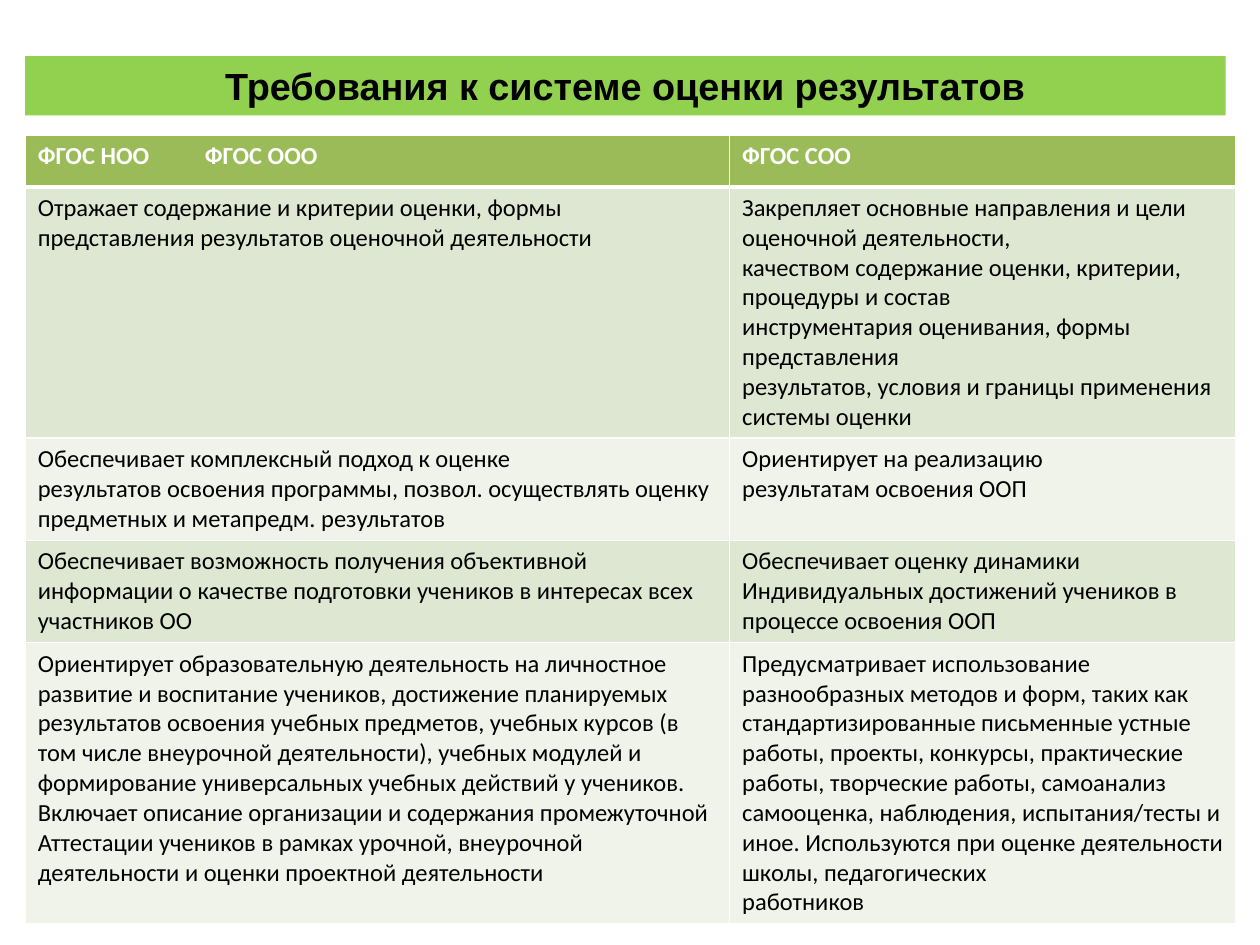
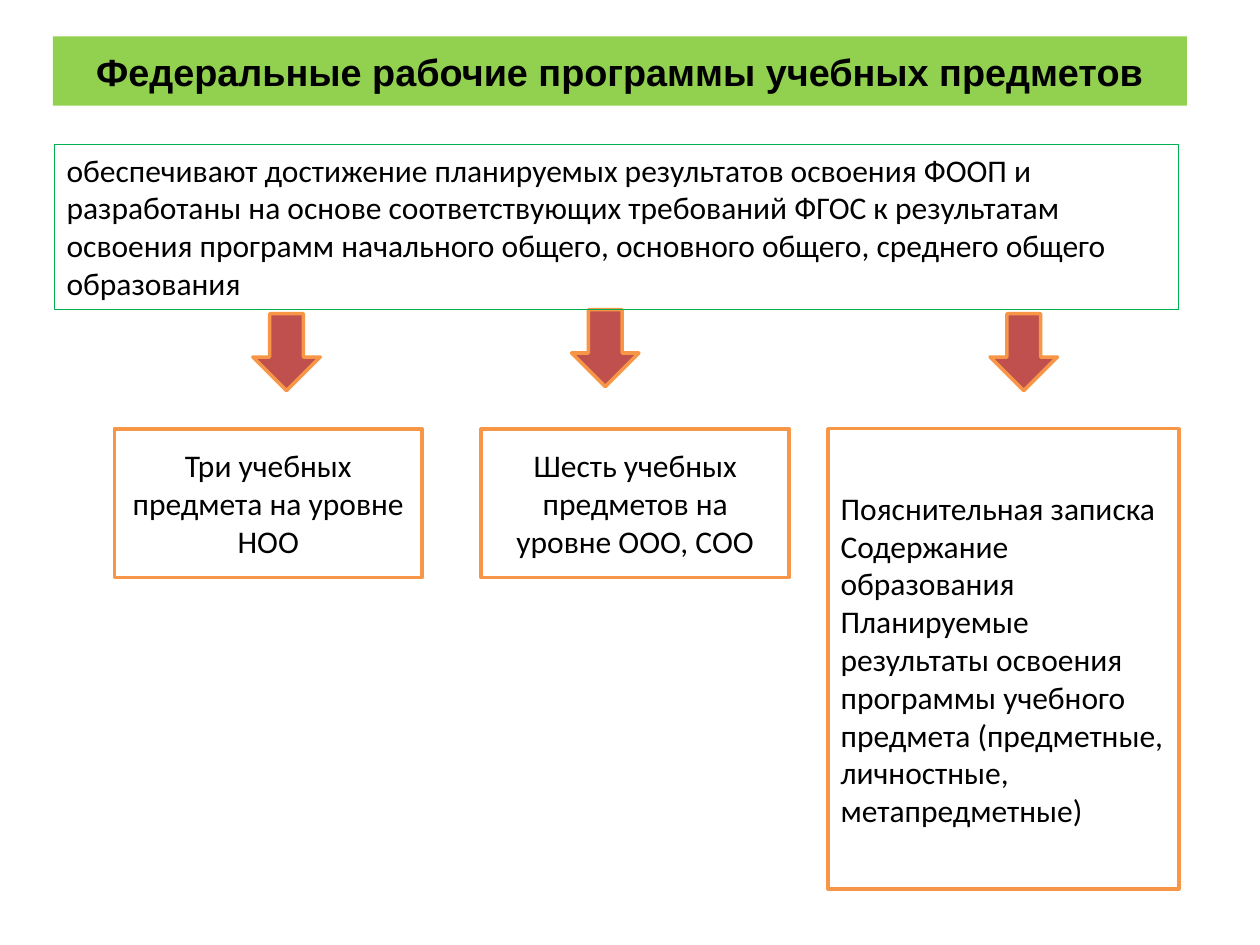
from lxml.etree import SubElement
from pptx import Presentation
from pptx.dml.color import RGBColor
from pptx.enum.shapes import MSO_SHAPE as Shape
from pptx.enum.text import MSO_ANCHOR as Anchor, MSO_AUTO_SIZE as AutoSize, PP_ALIGN as Align
from pptx.oxml import parse_xml
from pptx.oxml.ns import nsdecls, qn
from pptx.util import Pt

COLORS = {
    "band": "92D050", "text": "000000", "white": "FFFFFF",
    "header": "9BBB59", "odd_row": "DEE7D1", "even_row": "EFF3EA",
    "outline": "F79646", "arrow": "C0504D", "intro": "00B050",
}


def color(name):
    return RGBColor.from_string(COLORS[name])


class Deck:
    title_font, body_font = "Arial", "Calibri"

    def __init__(self):
        self.presentation = Presentation()
        self.presentation.slide_width, self.presentation.slide_height = Pt(720), Pt(540)
        self.slide = None

    def set_text(self, text_frame, text, size, font=body_font, ink="text", bold=False, align=Align.LEFT):
        text_frame.text = text
        for paragraph in text_frame.paragraphs:
            paragraph.alignment = align
            for run in paragraph.runs:
                run.font.name, run.font.size, run.font.bold = font, Pt(size), bold
                run.font.color.rgb = color(ink)

    def add_slide(self, title, left, top, width, height):
        """Start a title-only slide with its title on a green band."""
        self.slide = self.presentation.slides.add_slide(self.presentation.slide_layouts[5])
        band = self.slide.shapes.title
        band.left, band.top, band.width, band.height = Pt(left), Pt(top), Pt(width), Pt(height)
        band.fill.solid()
        band.fill.fore_color.rgb = color("band")
        text_frame = band.text_frame
        text_frame.auto_size, text_frame.word_wrap = AutoSize.NONE, True
        text_frame.vertical_anchor = Anchor.MIDDLE
        self.set_text(text_frame, title, 21.6, self.title_font, bold=True, align=Align.CENTER)

    def add_shape(self, kind, left, top, width, height, fill="white", line="outline", weight=2):
        shape = self.slide.shapes.add_shape(kind, Pt(left), Pt(top), Pt(width), Pt(height))
        shape.shadow.inherit = False
        if fill:
            shape.fill.solid()
            shape.fill.fore_color.rgb = color(fill)
        else:
            shape.fill.background()
        shape.line.color.rgb, shape.line.width = color(line), Pt(weight)
        return shape

    def add_box(self, text, *place, align=Align.LEFT, anchor=Anchor.MIDDLE, **look):
        text_frame = self.add_shape(Shape.RECTANGLE, *place, **look).text_frame
        text_frame.word_wrap, text_frame.vertical_anchor = True, anchor
        self.set_text(text_frame, text, 18, align=align)

    def add_borders(self, cell, bottom):
        properties = cell._tc.get_or_add_tcPr()
        for index, (side, weight) in enumerate(zip("LRTB", (1, 1, 1, bottom))):
            properties.insert(index, parse_xml(
                f'<a:ln{side} {nsdecls("a")} w="{Pt(weight)}"><a:solidFill>'
                f'<a:srgbClr val="{COLORS["white"]}"/></a:solidFill></a:ln{side}>'))

    def add_table(self, rows, left, top, widths, heights):
        table = self.slide.shapes.add_table(
            len(rows), len(widths), Pt(left), Pt(top), Pt(sum(widths)), Pt(sum(heights))).table
        for column, width in zip(table.columns, widths):
            column.width = Pt(width)
        for r, (texts, height) in enumerate(zip(rows, heights)):
            table.rows[r].height = Pt(height)
            is_header = r == 0
            fill = "header" if is_header else "odd_row" if r % 2 else "even_row"
            for c, text in enumerate(texts):
                cell = table.cell(r, c)
                cell.fill.solid()
                cell.fill.fore_color.rgb = color(fill)
                self.add_borders(cell, 3 if is_header else 1)
                self.set_text(cell.text_frame, text, 14, ink="white" if is_header else "text", bold=is_header)
        return table


def set_tab(paragraph, position):
    tabs = SubElement(paragraph._p.get_or_add_pPr(), qn("a:tabLst"))
    SubElement(tabs, qn("a:tab"), pos=str(Pt(position)), algn="l")


ASSESSMENT_ROWS = [
    ("ФГОС НОО\tФГОС ООО", "ФГОС СОО"),
    ("Отражает содержание и критерии оценки, формы представления результатов оценочной деятельности",
     "Закрепляет основные направления и цели оценочной деятельности,\n"
     "качеством содержание оценки, критерии, процедуры и состав\n"
     "инструментария оценивания, формы представления\n"
     "результатов, условия и границы применения системы оценки"),
    ("Обеспечивает комплексный подход к оценке\n"
     "результатов освоения программы, позвол. осуществлять оценку предметных и метапредм. результатов",
     "Ориентирует на реализацию\nрезультатам освоения ООП"),
    ("Обеспечивает возможность получения объективной информации о качестве подготовки учеников "
     "в интересах всех участников ОО",
     "Обеспечивает оценку динамики\nИндивидуальных достижений учеников в процессе освоения ООП"),
    ("Ориентирует образовательную деятельность на личностное развитие и воспитание учеников, "
     "достижение планируемых результатов освоения учебных предметов, учебных курсов "
     "(в том числе внеурочной деятельности), учебных модулей и\n"
     "формирование универсальных учебных действий у учеников.\n"
     "Включает описание организации и содержания промежуточной\n"
     "Аттестации учеников в рамках урочной, внеурочной деятельности и оценки проектной деятельности",
     "Предусматривает использование разнообразных методов и форм, таких как стандартизированные "
     "письменные устные работы, проекты, конкурсы, практические\n"
     "работы, творческие работы, самоанализ\n"
     "самооценка, наблюдения, испытания/тесты и иное. Используются при оценке деятельности школы, "
     "педагогических\nработников"),
]


def build_assessment(deck):
    deck.add_slide("Требования к системе оценки результатов", 14.4, 32, 686, 34)
    table = deck.add_table(ASSESSMENT_ROWS, 14.4, 77.3, (402.5, 289.5), (29.5, 143, 58.5, 58.5, 160))
    set_tab(table.cell(0, 0).text_frame.paragraphs[0], 95.5)


def build_programs(deck):
    deck.add_slide("Федеральные рабочие программы учебных предметов", 30.2, 20.8, 648, 39.6)
    box_top = 245
    subjects = ("Три учебных предмета на уровне НОО", "Шесть учебных предметов на уровне ООО, СОО")
    for index, text in enumerate(subjects):
        deck.add_box(text, 65.3 + 209.7 * index, box_top, 176, 85, align=Align.CENTER)
    for left, top in ((144.5, 179.3), (326.6, 177), (565.8, 179.3)):
        deck.add_shape(Shape.DOWN_ARROW, left, top, 38.5, 44, fill="arrow")
    deck.add_box(
        "обеспечивают достижение планируемых результатов освоения ФООП и разработаны на основе "
        "соответствующих требований ФГОС к результатам освоения программ начального общего, "
        "основного общего, среднего общего образования",
        31, 82.5, 642.5, 94.5, anchor=Anchor.TOP, fill=None, line="intro", weight=0.75)
    deck.add_box(
        "Пояснительная записка\nСодержание образования\n"
        "Планируемые результаты освоения программы учебного предмета "
        "(предметные, личностные, метапредметные)",
        473.3, box_top, 200.4, 263)


def main():
    deck = Deck()
    build_assessment(deck)
    build_programs(deck)
    deck.presentation.save("out.pptx")


if __name__ == "__main__":
    main()
